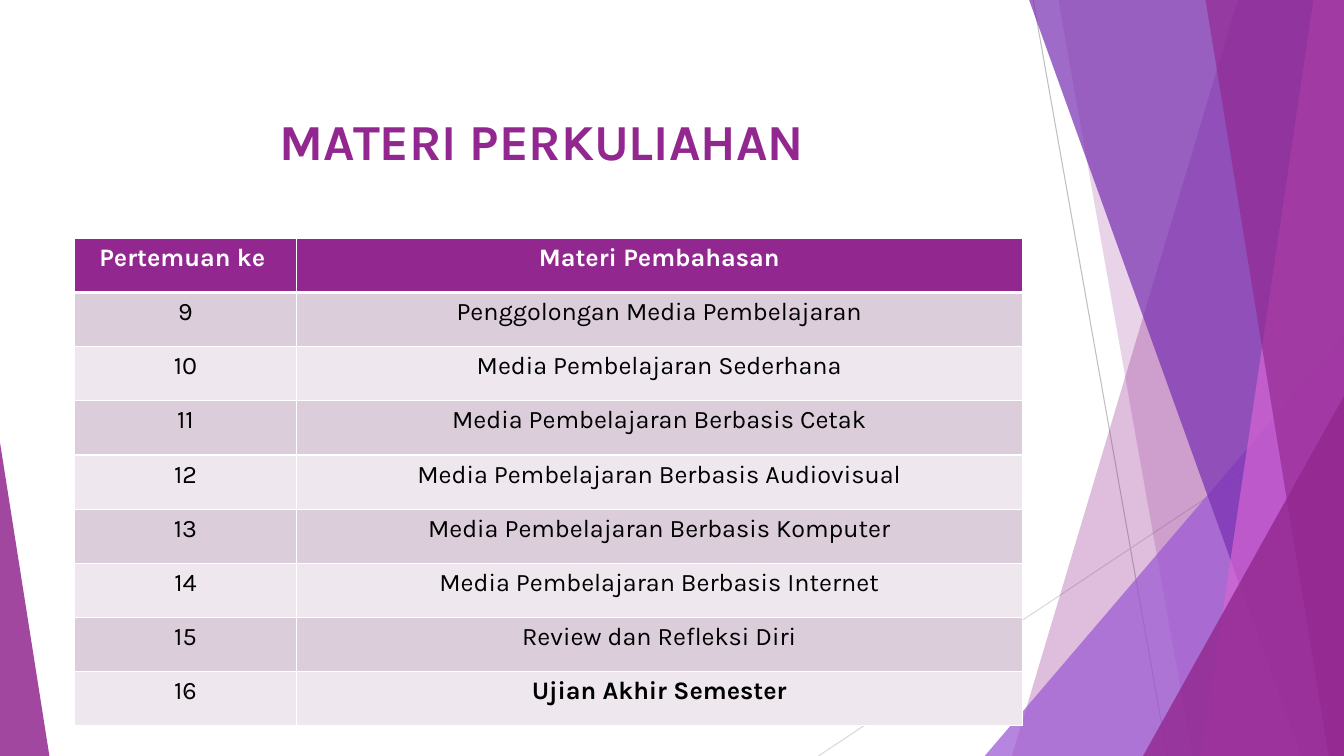
from dataclasses import dataclass

from lxml.etree import SubElement
from pptx import Presentation
from pptx.dml.color import RGBColor
from pptx.enum.shapes import MSO_CONNECTOR as Connector, MSO_SHAPE as Preset
from pptx.enum.text import MSO_ANCHOR as Anchor, PP_ALIGN as Align
from pptx.oxml import parse_xml
from pptx.oxml.ns import nsdecls, qn
from pptx.util import Pt

WIDTH, HEIGHT = 960, 540
FONT = "Karla"
PURPLE, WHITE, BLACK = "92278F", "FFFFFF", "000000"
ROW_FILLS = ("DCCDDB", "EEE8EE")


@dataclass
class Ray:
    start: tuple[float, float]
    end: tuple[float, float]
    color: str


@dataclass
class Band:
    """Area between a slanted left edge and the right side of the page."""
    top_x: float
    bottom_x: float
    color: str
    opacity: int


@dataclass
class Corner:
    """Triangle standing on the bottom of the page, with its tip at one side."""
    left: float
    top: float
    width: float
    tip: float
    color: str
    opacity: int


RAYS = [
    Ray((738, 0), (833.8, HEIGHT), "BFBFBF"),
    Ray((WIDTH, 290.2), (584.6, HEIGHT), "D9D9D9"),
]
FACETS = [
    Band(884.2, 722.9, PURPLE, 30),
    Band(756, 851.8, PURPLE, 20),
    Corner(703.4, 239.8, 256.6, 1, "9B57D3", 72),
    Band(735.1, 929.5, "762EB1", 70),
    Band(938.2, 858.2, "D665D3", 70),
    Band(861.1, 949, PURPLE, 65),
    Corner(816.5, 283, 143.5, 1, PURPLE, 80),
    Corner(0, 316.1, 35.3, 0, PURPLE, 85),
]
HEADER = ("Pertemuan ke ", "Materi Pembahasan")
FIRST_MEETING = 9
TOPICS = [
    "Penggolongan Media Pembelajaran",
    "Media Pembelajaran Sederhana",
    "Media Pembelajaran Berbasis Cetak",
    "Media Pembelajaran Berbasis Audiovisual",
    "Media Pembelajaran Berbasis Komputer",
    "Media Pembelajaran Berbasis Internet",
    "Review dan Refleksi Diri",
    "Ujian Akhir Semester",
]


def rgb(color: str) -> RGBColor:
    return RGBColor.from_string(color)


def write(para, text: str, size: float, color: str, bold: bool) -> None:
    para.alignment = Align.CENTER
    span = para.add_run()
    span.text = text
    span.font.name = FONT
    span.font.size = Pt(size)
    span.font.bold = bold
    span.font.color.rgb = rgb(color)


def draw_ray(page, ray: Ray) -> None:
    line = page.shapes.add_connector(
        Connector.STRAIGHT, *(Pt(value) for value in ray.start + ray.end))
    line.line.color.rgb = rgb(ray.color)
    line.line.width = Pt(0.75)
    SubElement(line._element.spPr, qn("a:effectLst"))


def draw_facet(page, facet: Band | Corner) -> None:
    if isinstance(facet, Band):
        outline = page.shapes.build_freeform(Pt(facet.top_x), Pt(0))
        outline.add_line_segments([
            (Pt(WIDTH), Pt(0)), (Pt(WIDTH), Pt(HEIGHT)), (Pt(facet.bottom_x), Pt(HEIGHT))])
        shape = outline.convert_to_shape()
    else:
        shape = page.shapes.add_shape(
            Preset.ISOSCELES_TRIANGLE, Pt(facet.left), Pt(facet.top),
            Pt(facet.width), Pt(HEIGHT - facet.top))
        shape.adjustments[0] = facet.tip
    shape.shadow.inherit = False
    shape.line.fill.background()
    shape.fill.solid()
    shape.fill.fore_color.rgb = rgb(facet.color)
    tint = shape._element.spPr.find(qn("a:solidFill"))[0]
    SubElement(tint, qn("a:alpha"), val=str(facet.opacity * 1000))


def draw_title(page, text: str) -> None:
    box = page.shapes.add_textbox(Pt(53.3), Pt(48.2), Pt(676.8), Pt(103.7))
    frame = box.text_frame
    frame.word_wrap = True
    frame.vertical_anchor = Anchor.MIDDLE
    write(frame.paragraphs[0], text, 36, PURPLE, True)


def style_cell(cell, fill: str, top: float, bottom: float) -> None:
    cell.fill.solid()
    cell.fill.fore_color.rgb = rgb(fill)
    properties = cell._tc.get_or_add_tcPr()
    # Borders come before the fill
    for place, (side, width) in enumerate(zip("LRTB", (1, 1, top, bottom))):
        properties.insert(place, parse_xml(
            f'<a:ln{side} {nsdecls("a")} w="{Pt(width)}"><a:solidFill>'
            f'<a:srgbClr val="{WHITE}"/></a:solidFill></a:ln{side}>'))


def draw_schedule(page) -> None:
    rows = [HEADER] + [
        (str(number), topic) for number, topic in enumerate(TOPICS, FIRST_MEETING)]
    row_height = 38.7
    table = page.shapes.add_table(
        len(rows), 2, Pt(53.3), Pt(170.2), Pt(676.8), Pt(row_height * len(rows))).table
    for column, width in zip(table.columns, (158.4, 518.4)):
        column.width = Pt(width)
    for index, texts in enumerate(rows):
        table.rows[index].height = Pt(row_height)
        is_header = index == 0
        fill = PURPLE if is_header else ROW_FILLS[(index - 1) % 2]
        for column, text in enumerate(texts):
            cell = table.cell(index, column)
            style_cell(cell, fill, 3 if index == 1 else 1, 3 if is_header else 1)
            bold = is_header or text == TOPICS[-1]
            write(cell.text_frame.paragraphs[0], text, 18,
                  WHITE if is_header else BLACK, bold)


def main() -> None:
    deck = Presentation()
    deck.slide_width, deck.slide_height = Pt(WIDTH), Pt(HEIGHT)
    page = deck.slides.add_slide(deck.slide_layouts[6])

    # Decorative background
    for ray in RAYS:
        draw_ray(page, ray)
    for facet in FACETS:
        draw_facet(page, facet)

    # Content
    draw_title(page, "MATERI PERKULIAHAN ")
    draw_schedule(page)

    deck.save("out.pptx")


if __name__ == "__main__":
    main()
